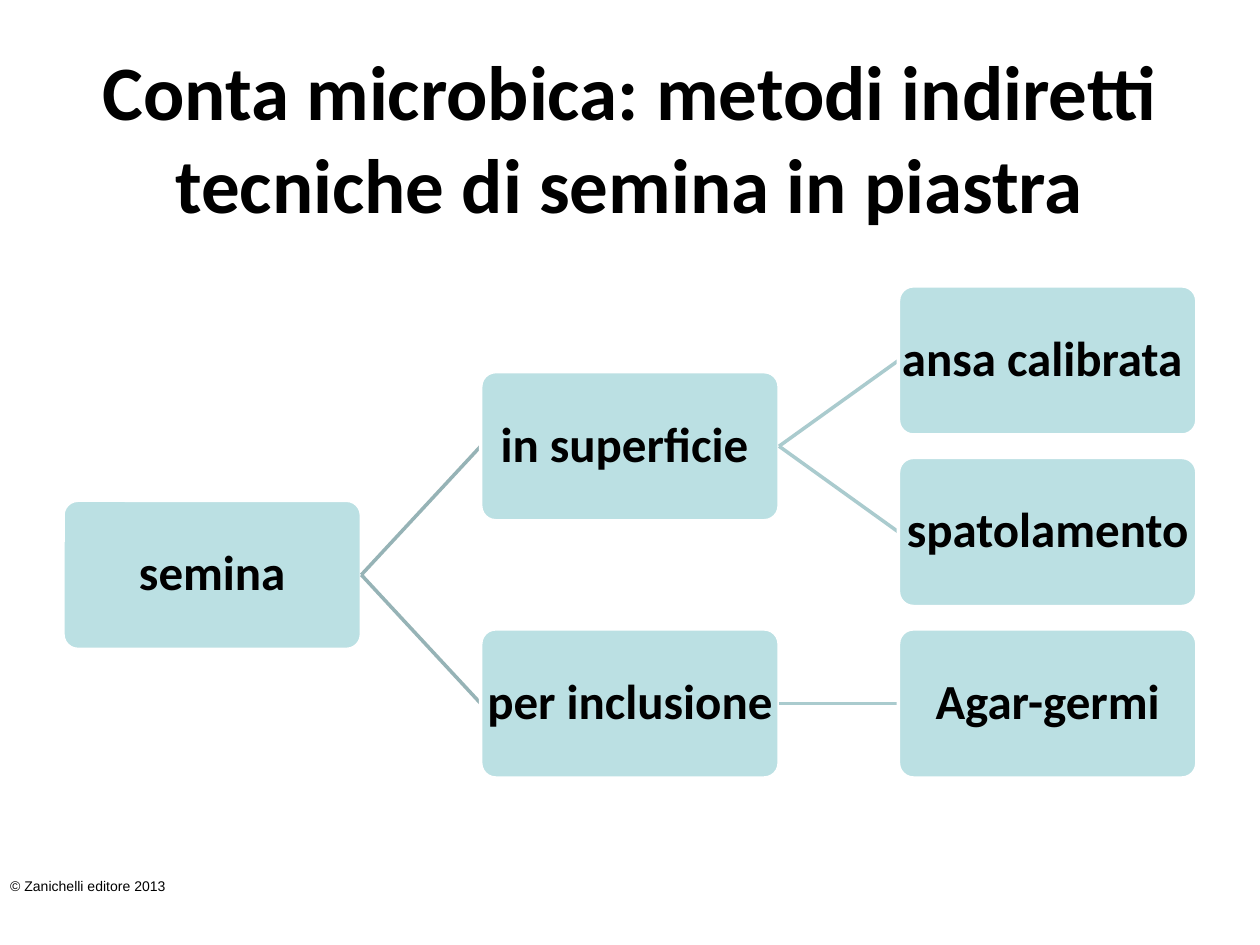
from dataclasses import dataclass
from typing import Optional

from lxml.etree import SubElement
from pptx import Presentation
from pptx.dml.color import RGBColor
from pptx.enum.shapes import MSO_CONNECTOR as Connector, MSO_SHAPE as Shape
from pptx.enum.text import MSO_ANCHOR as Anchor, PP_ALIGN as Align
from pptx.oxml.ns import qn
from pptx.util import Pt


@dataclass(frozen=True)
class Theme:
    text: str = "000000"
    box: str = "BBE0E3"
    outline: str = "FFFFFF"
    links: tuple[str, ...] = ("96B3B6", "AACBCE")  # one per tree level
    font: str = "Calibri"
    footer_font: str = "Arial"
    title_size: float = 44
    box_size: float = 28
    footer_size: float = 8
    line_width: float = 2


@dataclass(frozen=True)
class Node:
    label: str
    row: float
    children: tuple["Node", ...] = ()


def branch(label: str, *children: Node) -> Node:
    """Place a parent halfway between its first and last child."""
    return Node(label, (children[0].row + children[-1].row) / 2, children)


THEME = Theme()
LEFT, TOP = 36, 163.4
BOX_WIDTH, BOX_HEIGHT = 170.5, 85.2
COLUMN_STEP, ROW_STEP = 238.7, 98

TREE = branch(
    "semina",
    branch("in superficie ", Node("ansa calibrata ", 0), Node("spatolamento", 1)),
    branch("per inclusione", Node("Agar-germi", 2)),
)


def write_text(shape, text: str, *, size: float, font: str = THEME.font,
               bold: bool = True, align: Align = Align.CENTER,
               spacing: float = 1.0, wrap: bool = True,
               insets: tuple[float, float] = (0, 0)) -> None:
    frame = shape.text_frame
    frame.word_wrap = wrap
    frame.vertical_anchor = Anchor.MIDDLE
    frame.margin_left = frame.margin_right = Pt(insets[0])
    frame.margin_top = frame.margin_bottom = Pt(insets[1])
    paragraph = frame.paragraphs[0]
    paragraph.text = text
    paragraph.alignment = align
    paragraph.line_spacing = spacing
    for run in paragraph.runs:
        run.font.name = font
        run.font.size = Pt(size)
        run.font.bold = bold
        run.font.color.rgb = RGBColor.from_string(THEME.text)


def add_box(slide, node: Node, level: int):
    box = slide.shapes.add_shape(
        Shape.ROUNDED_RECTANGLE,
        Pt(LEFT + level * COLUMN_STEP), Pt(TOP + node.row * ROW_STEP),
        Pt(BOX_WIDTH), Pt(BOX_HEIGHT))
    box.adjustments[0] = 0.1
    box.shadow.inherit = False
    box.fill.solid()
    box.fill.fore_color.rgb = RGBColor.from_string(THEME.box)
    box.line.color.rgb = RGBColor.from_string(THEME.outline)
    box.line.width = Pt(THEME.line_width)
    write_text(box, node.label, size=THEME.box_size, spacing=0.9,
               wrap=False, insets=(1.4, 1.4))
    return box


def add_link(slide, parent, color: str):
    link = slide.shapes.add_connector(Connector.STRAIGHT, 0, 0, 0, 0)
    link.begin_connect(parent, 3)
    link.line.color.rgb = RGBColor.from_string(color)
    link.line.width = Pt(THEME.line_width)
    SubElement(link.element.spPr, qn("a:effectLst"))
    return link


def draw_tree(slide, node: Node, level: int = 0, link: Optional[object] = None) -> None:
    # Each link lies above its parent's outline and below its child's
    box = add_box(slide, node, level)
    if link is not None:
        link.end_connect(box, 1)
    for child in node.children:
        draw_tree(slide, child, level + 1, add_link(slide, box, THEME.links[level]))


def main() -> None:
    presentation = Presentation()
    presentation.slide_width, presentation.slide_height = Pt(720), Pt(540)
    slide = presentation.slides.add_slide(presentation.slide_layouts[6])

    # Copyright line
    footer = slide.shapes.add_textbox(Pt(5.8), Pt(498.2), Pt(153.4), Pt(15.8))
    write_text(footer, "© Zanichelli editore 2013", size=THEME.footer_size,
               font=THEME.footer_font, bold=False, align=Align.LEFT)

    # Title
    title = slide.shapes.add_textbox(Pt(36), Pt(21.6), Pt(648), Pt(112.3))
    write_text(title, "Conta microbica: metodi indiretti\vtecniche di semina in piastra",
               size=THEME.title_size, insets=(5, 2.9))

    # Tree of plating techniques
    draw_tree(slide, TREE)

    presentation.save("out.pptx")


if __name__ == "__main__":
    main()
